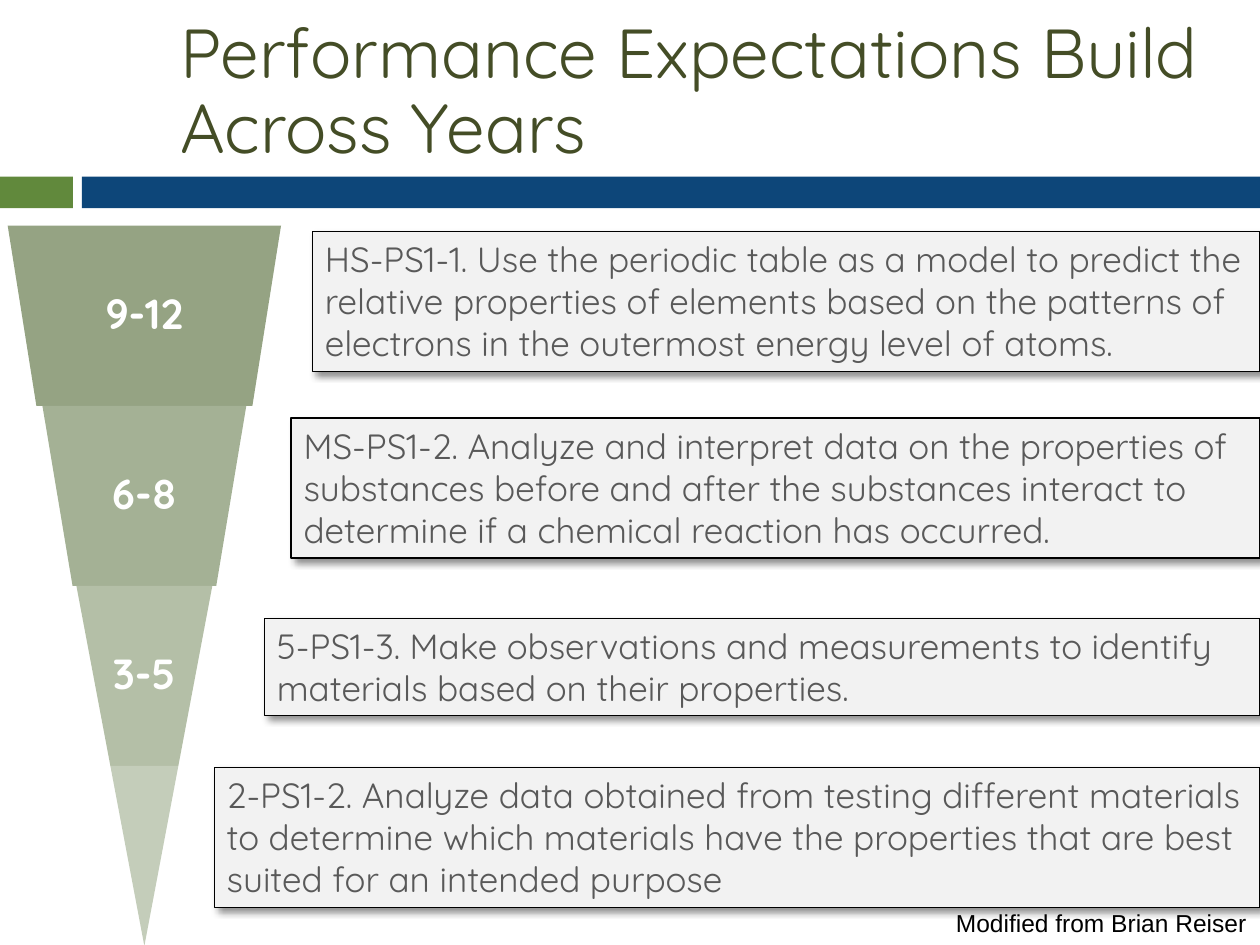
import pptx
import pptx.util
import pptx.dml.color
import pptx.enum.shapes
import pptx.enum.text
import pptx.oxml
from dataclasses import dataclass
from pptx.util import Cm


@dataclass(frozen=True)
class Theme:
    font: str = "Quicksand"
    credit_font: str = "Arial"
    title_size: float = 39.6
    tier_size: float = 24
    body_size: float = 20
    credit_size: float = 14
    title: str = "444D26"
    body: str = "595959"
    black: str = "000000"
    white: str = "FFFFFF"
    green_bar: str = "61893C"
    blue_bar: str = "0D4679"
    panel: str = "F2F2F2"
    tiers: tuple = ("95A383", "A4B195", "B4BFA7", "C4CDBA")


theme = Theme()
rgb = pptx.dml.color.RGBColor.from_string
shape_types = pptx.enum.shapes.MSO_SHAPE
middle = pptx.enum.text.MSO_ANCHOR.MIDDLE

presentation = pptx.Presentation()
presentation.slide_width = Cm(25.4)
presentation.slide_height = Cm(19.05)
slide = presentation.slides.add_slide(presentation.slide_layouts[6])


def add_block(kind, left, top, width, height, fill):
    shape = slide.shapes.add_shape(kind, Cm(left), Cm(top), Cm(width), Cm(height))
    shape.shadow.inherit = False
    shape.fill.solid()
    shape.fill.fore_color.rgb = rgb(fill)
    shape.line.fill.background()
    return shape


def write(shape, text, size, color, font=theme.font, bold=False, spacing=1.0,
          anchor=pptx.enum.text.MSO_ANCHOR.TOP, align=pptx.enum.text.PP_ALIGN.LEFT):
    frame = shape.text_frame
    frame.word_wrap = True
    frame.vertical_anchor = anchor
    paragraph = frame.paragraphs[0]
    paragraph.alignment = align
    paragraph.line_spacing = spacing
    run = paragraph.add_run()
    run.text = text
    run.font.name = font
    run.font.size = pptx.util.Pt(size)
    run.font.bold = bold
    run.font.color.rgb = rgb(color)
    return frame


# Divider bars below the title
add_block(shape_types.RECTANGLE, 0, 3.56, 1.47, 0.64, theme.green_bar)
add_block(shape_types.RECTANGLE, 1.65, 3.56, 23.75, 0.64, theme.blue_bar)

# Title
title = slide.shapes.add_textbox(Cm(3.38), Cm(0.2), Cm(21.16), Cm(3.38))
write(title, "Performance Expectations Build Across Years", theme.title_size,
      theme.title, spacing=0.9, anchor=middle)

# Inverted pyramid of grade bands: width, slant, label, label width
tiers = [
    (5.51, 0.159, "9-12", 3.58),
    (4.11, 0.167, "6-8", 2.69),
    (2.74, 0.25, "3-5", 1.78),
    (1.37, 0.5, None, 0),
]
pyramid_center, pyramid_top, tier_height = 2.91, 4.55, 3.63
for index, (width, slant, label, label_width) in enumerate(tiers):
    top = pyramid_top + index * tier_height
    tier = add_block(shape_types.TRAPEZOID, pyramid_center - width / 2, top,
                     width, tier_height, theme.tiers[index])
    tier.rotation = 180
    tier.adjustments[0] = slant
    if label:
        box = slide.shapes.add_textbox(Cm(pyramid_center - label_width / 2), Cm(top),
                                       Cm(label_width), Cm(tier_height))
        frame = write(box, label, theme.tier_size, theme.white, bold=True, spacing=0.9,
                      anchor=middle, align=pptx.enum.text.PP_ALIGN.CENTER)
        frame.margin_left = frame.margin_right = Cm(0.08)
        frame.margin_top = frame.margin_bottom = Cm(0.08)

# Expectation panels, all reaching the right edge: left, top, height, text
panels = [
    (6.3, 4.67, 2.82, "HS-PS1-1. Use the periodic table as a model to predict the relative "
     "properties of elements based on the patterns of electrons in the outermost energy "
     "level of atoms."),
    (5.87, 8.43, 2.82, "MS-PS1-2. Analyze and interpret data on the properties of substances "
     "before and after the substances interact to determine if a chemical reaction has "
     "occurred."),
    (5.33, 12.47, 1.96, "5-PS1-3. Make observations and measurements to identify materials "
     "based on their properties."),
    (4.32, 15.47, 2.82, "2-PS1-2. Analyze data obtained from testing different materials to "
     "determine which materials have the properties that are best suited for an intended "
     "purpose"),
]
shadow_xml = (
    '<a:outerShdw xmlns:a="http://schemas.openxmlformats.org/drawingml/2006/main" '
    'blurRad="50800" dist="38100" dir="2700000" algn="tl" rotWithShape="0">'
    f'<a:srgbClr val="{theme.black}"><a:alpha val="43000"/></a:srgbClr></a:outerShdw>'
)
for left, top, height, text in panels:
    panel = add_block(shape_types.RECTANGLE, left, top, 25.4 - left, height, theme.panel)
    panel.line.color.rgb = rgb(theme.black)
    panel.line.width = pptx.util.Pt(0.75)
    effects = panel.element.spPr.find(pptx.oxml.ns.qn("a:effectLst"))
    effects.append(pptx.oxml.parse_xml(shadow_xml))
    write(panel, text, theme.body_size, theme.body)

# Attribution
credit = slide.shapes.add_textbox(Cm(19.02), Cm(18.19), Cm(6.43), Cm(0.86))
write(credit, "Modified from Brian Reiser", theme.credit_size, theme.black,
      font=theme.credit_font)

presentation.save("out.pptx")
